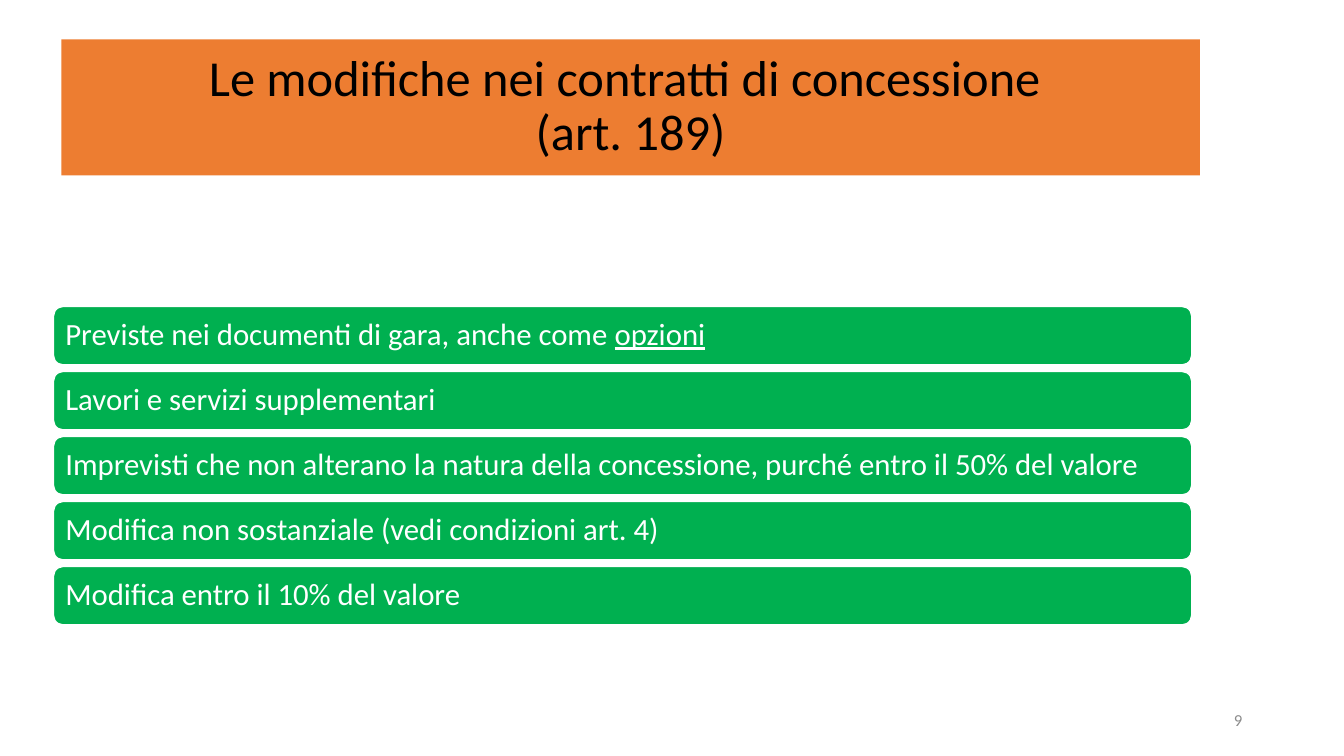
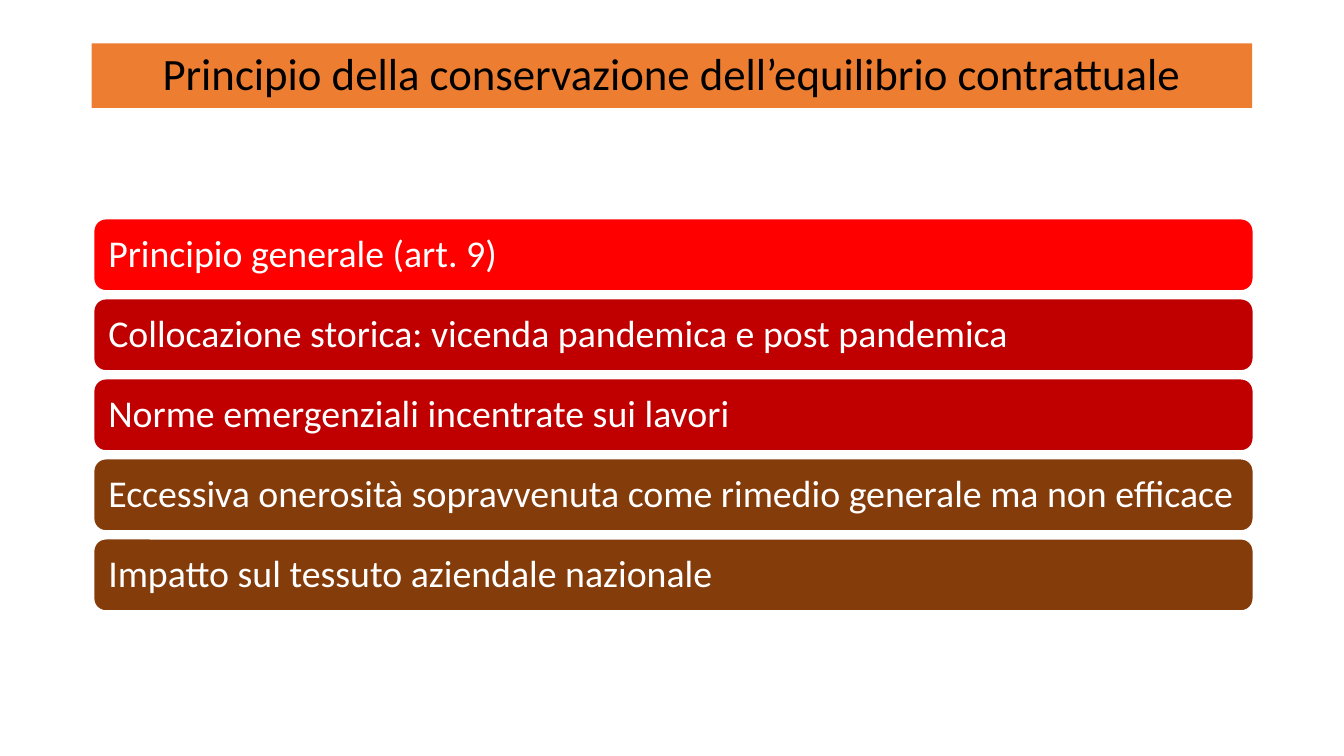
from dataclasses import dataclass

from pptx import Presentation
from pptx.dml.color import RGBColor as RGB
from pptx.enum.shapes import MSO_SHAPE as SHAPE
from pptx.enum.text import MSO_ANCHOR as ANCHOR, MSO_AUTO_SIZE as AUTO, PP_ALIGN as ALIGN
from pptx.util import Inches, Pt


@dataclass(frozen=True)
class Theme:
    font: str = "Calibri"
    black: str = "000000"
    white: str = "FFFFFF"
    grey: str = "8C8C8C"
    orange: str = "ED7D31"
    green: str = "00B050"
    red: str = "FF0000"
    dark_red: str = "C00000"
    brown: str = "843C0B"
    title_large: int = 36
    title: int = 32
    bar_large: int = 27
    bar: int = 22
    number: int = 12
    line_spacing: float = 0.9
    bar_share: float = 0.9  # part of each row that the bar fills


T = Theme()


def fill(sp, color):
    sp.fill.solid()
    sp.fill.fore_color.rgb = RGB.from_string(color)


def style(p, size, color, align=ALIGN.LEFT):
    p.alignment = align
    p.line_spacing = T.line_spacing
    p.font.name = T.font
    p.font.size = Pt(size)
    p.font.color.rgb = RGB.from_string(color)


def add_title_slide(prs, text, box, size):
    """Add a slide whose title is centred in an orange band."""
    slide = prs.slides.add_slide(prs.slide_layouts[5])
    sp = slide.shapes.title
    sp.left, sp.top, sp.width, sp.height = map(Inches, box)
    fill(sp, T.orange)
    tf = sp.text_frame
    tf.text = text
    tf.auto_size = AUTO.NONE
    tf.vertical_anchor = ANCHOR.MIDDLE
    style(tf.paragraphs[0], size, T.black, ALIGN.CENTER)
    return slide


def add_bars(slide, bars, box, size, inset):
    """Stack (color, text, underlined ending) bars in equal rows of the box."""
    left, top, width, height = box
    # The last row has no gap below it.
    pitch = height / (len(bars) - 1 + T.bar_share)
    for row, (color, text, underlined) in enumerate(bars):
        sp = slide.shapes.add_shape(
            SHAPE.ROUNDED_RECTANGLE, Inches(left), Inches(top + row * pitch),
            Inches(width), Inches(pitch * T.bar_share))
        sp.shadow.inherit = False
        fill(sp, color)
        sp.line.color.rgb = RGB.from_string(T.white)
        sp.line.width = Pt(1)
        tf = sp.text_frame
        tf.word_wrap = True
        tf.vertical_anchor = ANCHOR.MIDDLE
        # The rounded corners add a little to the left and right insets.
        tf.margin_left = tf.margin_right = Inches(inset)
        tf.margin_top = tf.margin_bottom = 0
        p = tf.paragraphs[0]
        style(p, size, T.white)
        p.add_run().text = text
        if underlined:
            r = p.add_run()
            r.text = underlined
            r.font.underline = True


def add_slide_number(slide, number, box):
    tf = slide.shapes.add_textbox(*map(Inches, box)).text_frame
    tf.word_wrap = True
    tf.vertical_anchor = ANCHOR.MIDDLE
    tf.text = str(number)
    style(tf.paragraphs[0], T.number, T.grey, ALIGN.RIGHT)


def concession_slide(prs):
    slide = add_title_slide(
        prs, "Le modifiche nei contratti di concessione \v(art. 189)",
        (0.61, 0.39, 11.29, 1.35), T.title_large)
    add_bars(slide, [
        (T.green, "Previste nei documenti di gara, anche come ", "opzioni"),
        (T.green, "Lavori e servizi supplementari", ""),
        (T.green, "Imprevisti che non alterano la natura della concessione, "
                  "purché entro il 50% del valore", ""),
        (T.green, "Modifica non sostanziale (vedi condizioni art. 4)", ""),
        (T.green, "Modifica entro il 10% del valore", ""),
    ], (0.53, 3.04, 11.29, 3.16), T.bar, 0.09)
    add_slide_number(slide, 9, (9.42, 6.95, 3, 0.4))


def balance_slide(prs):
    slide = add_title_slide(
        prs, "Principio della conservazione dell’equilibrio contrattuale",
        (0.91, 0.43, 11.51, 0.64), T.title)
    add_bars(slide, [
        (T.red, "Principio generale (art. 9)", ""),
        (T.dark_red, "Collocazione storica: vicenda pandemica e post pandemica", ""),
        (T.dark_red, "Norme emergenziali incentrate sui lavori", ""),
        (T.brown, "Eccessiva onerosità sopravvenuta come rimedio generale "
                  "ma non efficace", ""),
        (T.brown, "Impatto sul tessuto aziendale nazionale", ""),
    ], (0.93, 2.17, 11.5, 3.89), T.bar_large, 0.11)


def main():
    prs = Presentation()
    prs.slide_width, prs.slide_height = Inches(13.33), Inches(7.5)
    concession_slide(prs)
    balance_slide(prs)
    prs.save("out.pptx")


if __name__ == "__main__":
    main()
